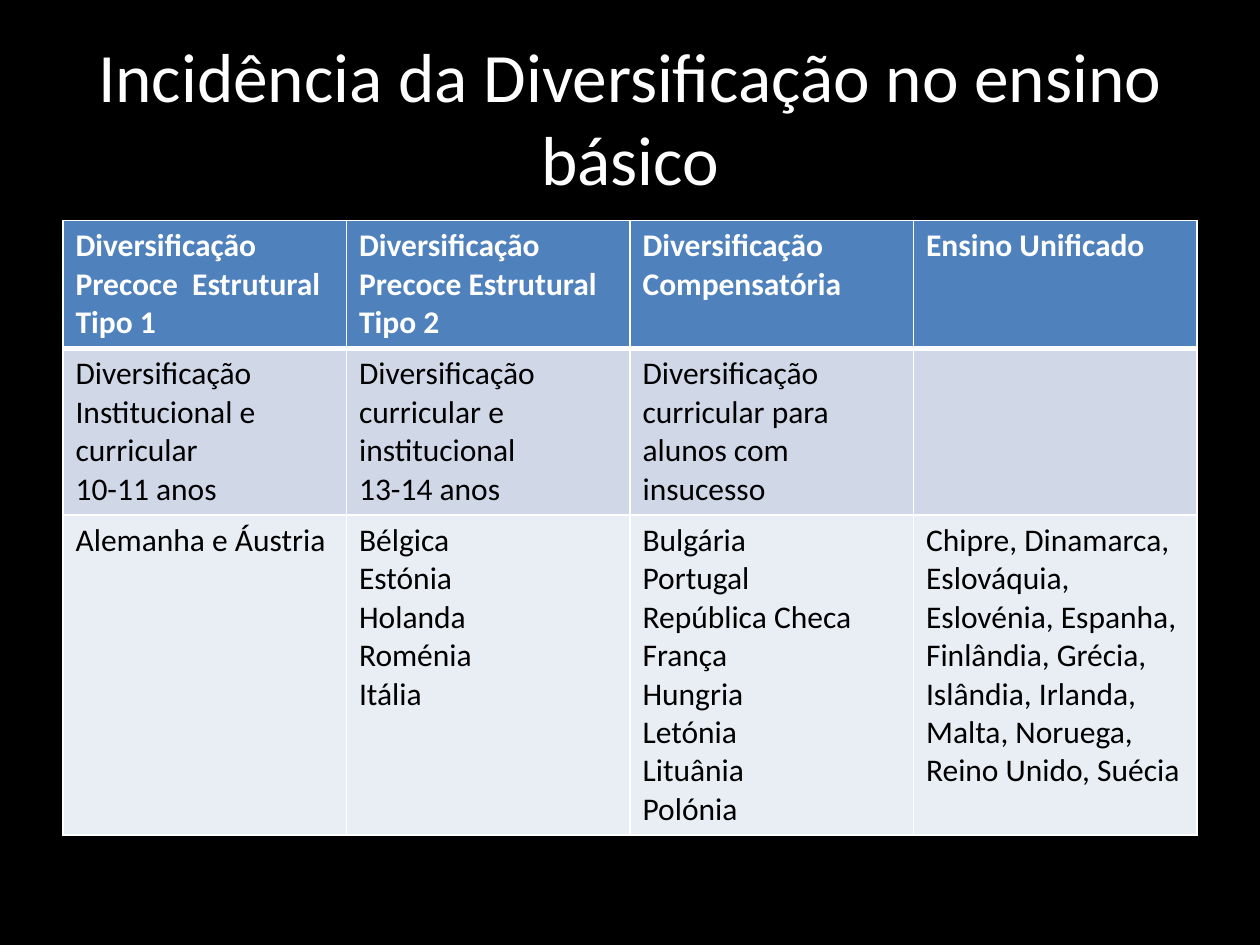
from lxml import etree
from pptx import Presentation
from pptx import util as u
from pptx.dml.color import RGBColor
from pptx.enum import text
from pptx.oxml import ns

TITLE = "Incidência da Diversificação no ensino básico"
ROWS = [
    {"height": 1.01, "fill": "4F81BD", "color": "FFFFFF", "bold": True, "bottom": 3, "cells": [
        ["Diversificação Precoce  Estrutural Tipo 1"],
        ["Diversificação Precoce Estrutural", "Tipo 2"],
        ["Diversificação", "Compensatória"],
        ["Ensino Unificado"]]},
    {"height": 1.32, "fill": "D0D8E8", "color": "000000", "bold": False, "bottom": 1, "cells": [
        ["Diversificação Institucional e curricular", "10-11 anos"],
        ["Diversificação curricular e institucional", "13-14 anos"],
        ["Diversificação curricular para alunos com insucesso"],
        []]},
    {"height": 2.54, "fill": "E9EDF4", "color": "000000", "bold": False, "bottom": 1, "cells": [
        ["Alemanha e Áustria"],
        ["Bélgica", "Estónia", "Holanda", "Roménia", "Itália"],
        ["Bulgária", "Portugal", "República Checa", "França",
         "Hungria", "Letónia", "Lituânia", "Polónia"],
        ["Chipre, Dinamarca,",
         "Eslováquia, Eslovénia, Espanha, Finlândia, Grécia, Islândia, Irlanda,",
         "Malta, Noruega, Reino Unido, Suécia"]]},
]
LEFT, WIDTH, TABLE_TOP = 0.5, 9, 1.75


def paint(fill, color):
    """Fill with one solid colour."""
    fill.solid()
    fill.fore_color.rgb = RGBColor.from_string(color)


def style(paragraph, size, color, bold=False):
    """Set the font of a paragraph."""
    font = paragraph.font
    font.name, font.size, font.bold = "Calibri", u.Pt(size), bold
    font.color.rgb = RGBColor.from_string(color)


def add_borders(cell, top, bottom, color="FFFFFF"):
    """Draw solid lines on the four sides of a cell."""
    properties = cell._tc.get_or_add_tcPr()
    for side, width in {"L": 1, "R": 1, "T": top, "B": bottom}.items():
        line = etree.SubElement(properties, ns.qn(f"a:ln{side}"), w=str(u.Pt(width)))
        solid = etree.SubElement(line, ns.qn("a:solidFill"))
        etree.SubElement(solid, ns.qn("a:srgbClr"), val=color)


def add_title(slide):
    """Write the title in its placeholder."""
    title = slide.shapes.title
    title.left, title.top, title.width, title.height = map(u.Inches, (LEFT, 0.3, WIDTH, 1.25))
    frame = title.text_frame
    frame.text = TITLE
    frame.auto_size = text.MSO_AUTO_SIZE.NONE
    frame.vertical_anchor = text.MSO_ANCHOR.MIDDLE
    frame.paragraphs[0].alignment = text.PP_ALIGN.CENTER
    style(frame.paragraphs[0], 39.6, "FFFFFF")


def add_table(slide):
    """Build the table of diversification types and countries."""
    columns = len(ROWS[0]["cells"])
    height = sum(row["height"] for row in ROWS)
    box = map(u.Inches, (LEFT, TABLE_TOP, WIDTH, height))
    table = slide.shapes.add_table(len(ROWS), columns, *box).table
    for column in table.columns:
        column.width = u.Inches(WIDTH / columns)
    top = 1
    for index, row in enumerate(ROWS):
        table.rows[index].height = u.Inches(row["height"])
        for position, lines in enumerate(row["cells"]):
            cell = table.cell(index, position)
            add_borders(cell, top, row["bottom"])
            paint(cell.fill, row["fill"])
            cell.text = "\n".join(lines)
            for paragraph in cell.text_frame.paragraphs:
                style(paragraph, 18, row["color"], row["bold"])
        top = row["bottom"]


def main():
    """Build and save the slide."""
    presentation = Presentation()
    presentation.slide_width, presentation.slide_height = u.Inches(10), u.Inches(7.5)
    slide = presentation.slides.add_slide(presentation.slide_layouts[5])
    paint(slide.background.fill, "000000")
    add_title(slide)
    add_table(slide)
    presentation.save("out.pptx")


if __name__ == "__main__":
    main()
